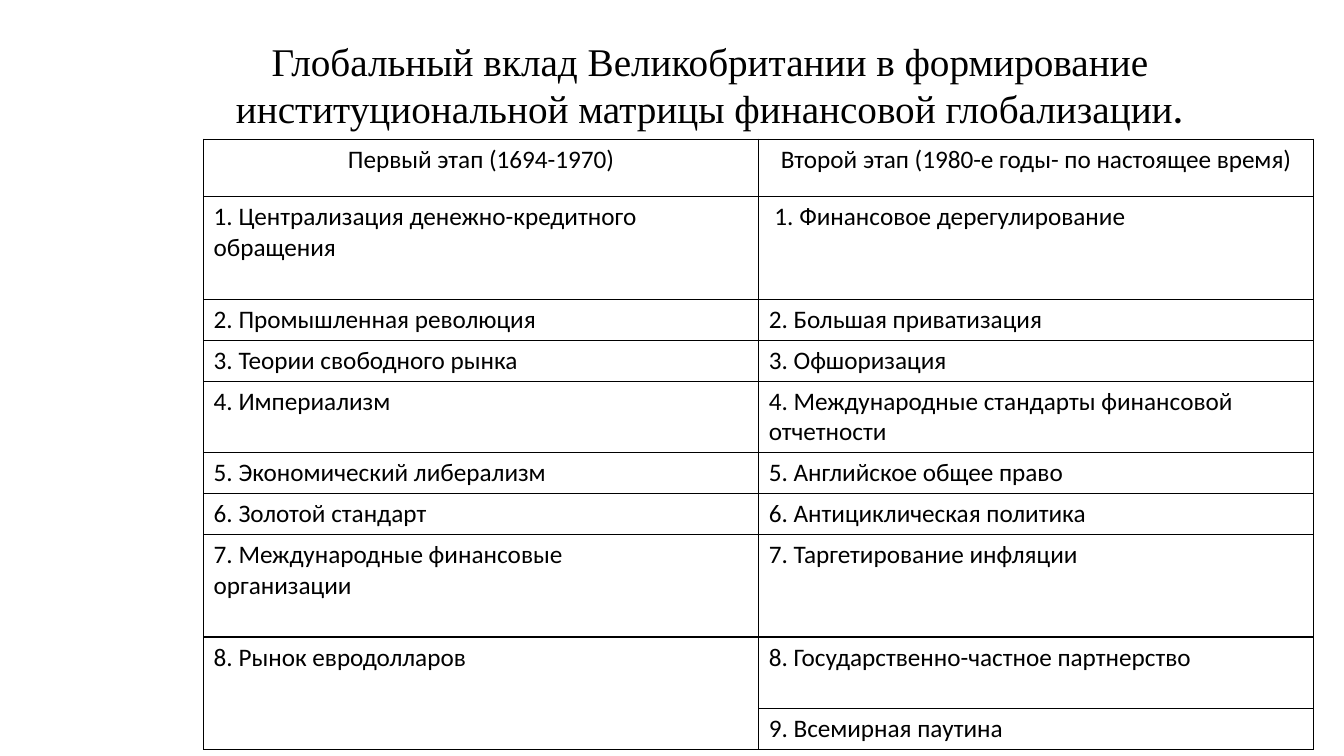
"""Build a slide comparing two stages of Britain's contribution to financial globalization."""
from dataclasses import dataclass

from lxml import etree
from pptx import Presentation
from pptx import util as u
from pptx.dml.color import RGBColor
from pptx.enum import text
from pptx.oxml import ns

BLACK = RGBColor(0x00, 0x00, 0x00)
BODY_FONT = "Calibri"
TITLE_FONT = "Times New Roman"
SLIDE_WIDTH = u.Inches(13.33)
SLIDE_HEIGHT = u.Inches(7.5)
LINE_HEIGHT = 22
CELL_PADDING = u.Inches(0.1)
BORDER_WIDTH = u.Pt(1)


@dataclass(frozen=True)
class Stage:
    """One table row: text of both stages and its height in text lines."""

    first: str
    second: str
    lines: float = 1
    align: text.PP_ALIGN = text.PP_ALIGN.LEFT


STAGES = [
    Stage("Первый этап (1694-1970)", "Второй этап (1980-е годы- по настоящее время)",
          1.55, text.PP_ALIGN.CENTER),
    Stage("1. Централизация денежно-кредитного\nобращения", " 1. Финансовое дерегулирование", 3),
    Stage("2. Промышленная революция", "2. Большая приватизация"),
    Stage("3. Теории свободного рынка", "3. Офшоризация"),
    Stage("4. Империализм", "4. Международные стандарты финансовой отчетности", 2),
    Stage("5. Экономический либерализм", "5. Английское общее право"),
    Stage("6. Золотой стандарт", "6. Антициклическая политика"),
    Stage("7. Международные финансовые\nорганизации", "7. Таргетирование инфляции", 3),
    Stage("8. Рынок евродолларов", "8. Государственно-частное партнерство", 2),
    Stage("", "9. Всемирная паутина"),
]


def across(percent: float) -> int:
    """Turn a percentage of the slide width into a length."""
    return round(SLIDE_WIDTH * percent / 100)


def down(percent: float) -> int:
    """Turn a percentage of the slide height into a length."""
    return round(SLIDE_HEIGHT * percent / 100)


def add_text(paragraph, content: str, *, size: float = 18, font: str = BODY_FONT,
             color: RGBColor = BLACK, align: text.PP_ALIGN = text.PP_ALIGN.LEFT) -> None:
    """Append a formatted run to a paragraph."""
    paragraph.alignment = align
    run = paragraph.add_run()
    run.text = content
    run.font.size = u.Pt(size)
    run.font.name = font
    run.font.color.rgb = color


def add_borders(cell, color: RGBColor = BLACK) -> None:
    """Draw a solid line on all four sides of a cell."""
    properties = cell._tc.get_or_add_tcPr()
    for position, side in enumerate(("lnL", "lnR", "lnT", "lnB")):
        line = etree.Element(ns.qn(f"a:{side}"), w=str(BORDER_WIDTH))
        fill = etree.SubElement(line, ns.qn("a:solidFill"))
        etree.SubElement(fill, ns.qn("a:srgbClr"), val=str(color))
        properties.insert(position, line)


def add_title(slide) -> None:
    """Add the slide heading."""
    box = slide.shapes.add_textbox(across(8.33), down(5.07), across(88.97), down(13.07))
    frame = box.text_frame
    frame.word_wrap = True
    frame.vertical_anchor = text.MSO_ANCHOR.MIDDLE
    paragraph = frame.paragraphs[0]
    paragraph.line_spacing = 0.9
    add_text(paragraph, "Глобальный вклад Великобритании в формирование "
             "институциональной матрицы финансовой глобализации",
             size=28, font=TITLE_FONT, align=text.PP_ALIGN.CENTER)
    add_text(paragraph, ".", size=32, align=text.PP_ALIGN.CENTER)


def fill_cell(cell, content: str, align: text.PP_ALIGN) -> None:
    """Write one paragraph per line of content and outline the cell."""
    cell.fill.background()
    add_borders(cell)
    frame = cell.text_frame
    for index, line in enumerate(content.splitlines()):
        paragraph = frame.add_paragraph() if index else frame.paragraphs[0]
        add_text(paragraph, line, align=align)


def add_stage_table(slide, stages: list[Stage]) -> None:
    """Add the two-column table of stages."""
    heights = [u.Pt(LINE_HEIGHT * stage.lines) + CELL_PADDING for stage in stages]
    frame = slide.shapes.add_table(len(stages), 2, across(15.15), down(18.4),
                                   across(82.6), sum(heights))
    table = frame.table
    table.first_row = False
    table.horz_banding = False
    for row, (stage, height) in enumerate(zip(stages, heights)):
        table.rows[row].height = height
        for column, content in enumerate((stage.first, stage.second)):
            fill_cell(table.cell(row, column), content, stage.align)
    last = len(stages) - 1
    table.cell(last - 1, 0).merge(table.cell(last, 0))


def main() -> None:
    """Build and save the presentation."""
    presentation = Presentation()
    presentation.slide_width = SLIDE_WIDTH
    presentation.slide_height = SLIDE_HEIGHT
    slide = presentation.slides.add_slide(presentation.slide_layouts[6])
    add_title(slide)
    add_stage_table(slide, STAGES)
    presentation.save("out.pptx")


if __name__ == "__main__":
    main()
